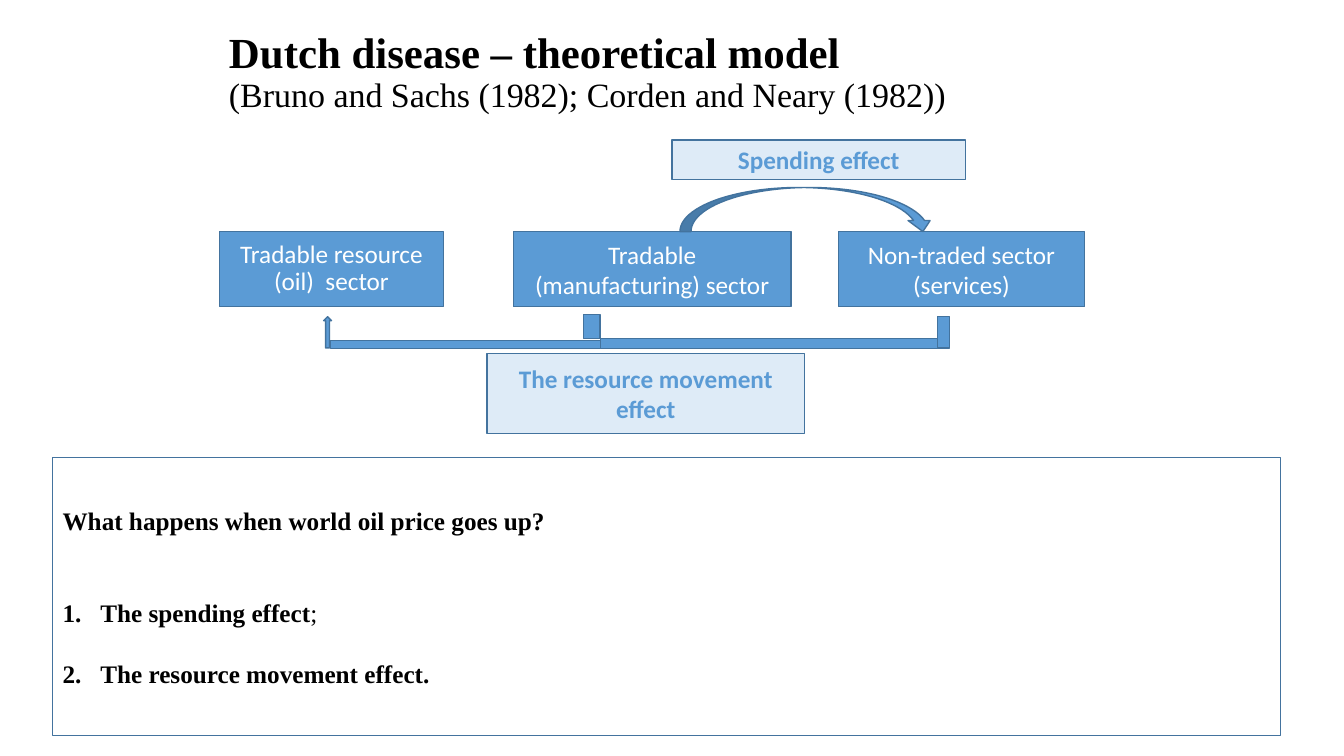
from pptx import Presentation
from pptx.dml.color import RGBColor
from pptx.enum.shapes import MSO_SHAPE as Kind
from pptx.enum.text import MSO_ANCHOR as Anchor, PP_ALIGN as Align
from pptx.oxml.ns import qn
from pptx.util import Pt

BLUE, EDGE, PALE = "5B9BD5", "43739E", "DEEBF7"
WHITE, BLACK = "FFFFFF", "000000"
SERIF, SANS = "Times New Roman", "Calibri"


def paint(color, code):
    color.rgb = RGBColor.from_string(code)


def shape(slide, kind, left, top, width, height, fill=BLUE):
    item = slide.shapes.add_shape(kind, Pt(left), Pt(top), Pt(width), Pt(height))
    item.shadow.inherit = False
    item.fill.solid()
    paint(item.fill.fore_color, fill)
    paint(item.line.color, EDGE)
    item.line.width = Pt(1)
    return item


def number(para, indent=27):
    props = para._p.get_or_add_pPr()
    props.set("marL", str(Pt(indent)))
    props.set("indent", str(-Pt(indent)))
    mark = props.makeelement(qn("a:buAutoNum"), {"type": "arabicPeriod"})
    props.append(mark)


def write(para, text, size=18, font=SANS, color=WHITE, bold=False,
          align=Align.CENTER, line=None, before=None):
    para.alignment = align
    if line:
        para.line_spacing = line
    if before:
        para.space_before = Pt(before)
    run = para.add_run()
    run.text = text
    run.font.size = Pt(size)
    run.font.name = font
    run.font.bold = bold
    paint(run.font.color, color)


def frame(item):
    body = item.text_frame
    body.word_wrap = True
    body.vertical_anchor = Anchor.MIDDLE
    return body


def box(slide, text, left, top, width, height, fill=BLUE, **style):
    item = shape(slide, Kind.RECTANGLE, left, top, width, height, fill)
    write(frame(item).paragraphs[0], text, **style)


def title(slide):
    item = slide.shapes.add_textbox(Pt(156.5), Pt(21.6), Pt(648), Pt(61.2))
    para = frame(item).paragraphs[0]
    style = dict(font=SERIF, color=BLACK, align=Align.LEFT, line=0.9)
    write(para, "Dutch disease – theoretical model", size=30.6, bold=True, **style)
    para.add_line_break()
    write(para, "(Bruno and Sachs (1982); Corden and Neary (1982))", size=24.3, **style)


def panel(slide):
    item = shape(slide, Kind.RECTANGLE, 37.6, 326.9, 877, 198.4, WHITE)
    body = frame(item)
    style = dict(font=SERIF, color=BLACK, align=Align.JUSTIFY)
    write(body.paragraphs[0], "What happens when world oil price goes up?",
          bold=True, **style)
    points = [("The spending effect", ";", 44), ("The resource movement effect.", "", 22)]
    for text, tail, gap in points:
        para = body.add_paragraph()
        number(para)
        write(para, text, bold=True, before=gap, **style)
        if tail:
            write(para, tail, **style)


def main():
    deck = Presentation()
    deck.slide_width, deck.slide_height = Pt(960), Pt(540)
    slide = deck.slides.add_slide(deck.slide_layouts[6])
    title(slide)

    # Three sectors
    top, height = 165.4, 53.8
    box(slide, "Tradable resource (oil)  sector", 156.8, top, 160, height, line=0.9)
    box(slide, "Tradable (manufacturing) sector", 366.6, top, 198.5, height)
    box(slide, "Non-traded sector (services)", 598.8, top, 176, height)

    # Spending effect
    label = dict(fill=PALE, color=BLUE, bold=True)
    shape(slide, Kind.CURVED_DOWN_ARROW, 485.7, 133.9, 181.4, 31.5)
    box(slide, "Spending effect", 480, 100, 209.7, 28.3, **label)

    # Resource movement effect: bars, stems and the arrow head
    bars = [(236, 243.2, 193, 5.6), (416.8, 224.8, 11.8, 17),
            (669.6, 226.2, 8.8, 22.3), (429, 241.8, 240.6, 7)]
    for spot in bars:
        shape(slide, Kind.RECTANGLE, *spot)
    shape(slide, Kind.UP_ARROW, 231.2, 226.2, 5.6, 22.3)
    box(slide, "The resource movement effect", 347.8, 252.7, 227, 56.9, **label)

    # Question and answers
    panel(slide)
    deck.save("out.pptx")


if __name__ == "__main__":
    main()
